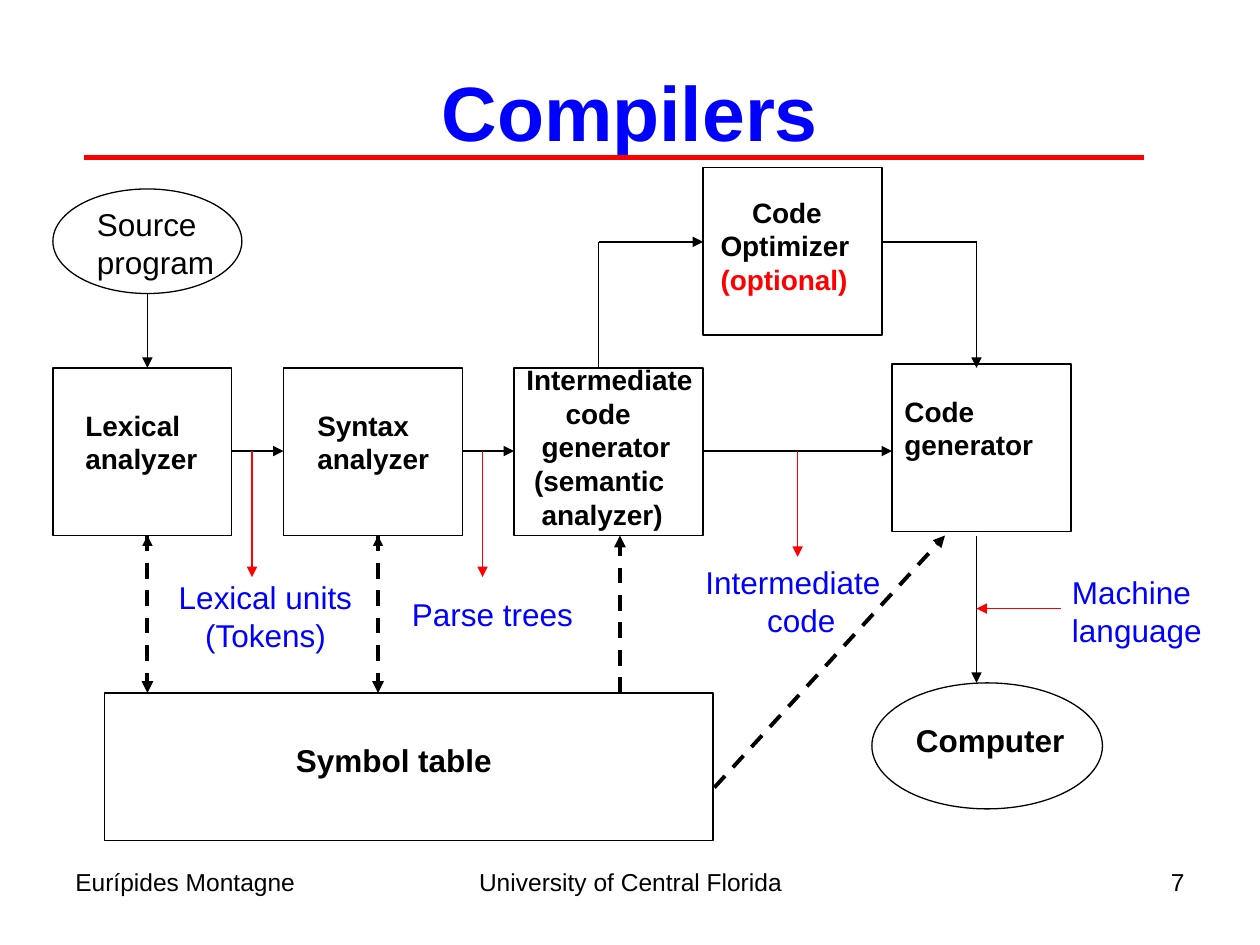
"""Build the slide that shows the phases of a compiler."""
import pptx
import pptx.dml.color
import pptx.enum.dml
import pptx.enum.shapes
import pptx.enum.text
import pptx.oxml.ns
import pptx.util
from lxml import etree

Inches = pptx.util.Inches
Color = pptx.dml.color.RGBColor
Kind = pptx.enum.shapes.MSO_SHAPE
Align = pptx.enum.text.PP_ALIGN
Anchor = pptx.enum.text.MSO_ANCHOR
qn = pptx.oxml.ns.qn

BLACK = Color(0, 0, 0)
BLUE = Color(0, 0, 255)
RED = Color(255, 0, 0)


def write(para, text, size=18, color=BLACK, bold=False, align=Align.LEFT, indent=0):
    para.alignment = align
    if indent:
        props = para._p.get_or_add_pPr()
        props.set("marL", str(Inches(indent)))
        props.set("indent", "0")
    run = para.add_run()
    run.text = text
    font = run.font
    font.name = "Arial"
    font.size = pptx.util.Pt(size)
    font.bold = bold
    font.color.rgb = color


class Chart:
    def __init__(self, slide):
        self.slide = slide
        self.thin = 0.75
        self.thick = 2.25

    def title(self, text, at):
        head = self.slide.shapes.title
        head.left, head.top, head.width, head.height = map(Inches, at)
        frame = head.text_frame
        frame.vertical_anchor = Anchor.MIDDLE
        write(frame.paragraphs[0], text, size=44, color=BLUE, bold=True,
              align=Align.CENTER)

    def shape(self, kind, *at):
        form = self.slide.shapes.add_shape(kind, *map(Inches, at))
        form.shadow.inherit = False
        form.fill.background()
        form.line.color.rgb = BLACK
        form.line.width = pptx.util.Pt(self.thin)

    def text(self, at, *lines, wrap=False, indents=(), colors=(), **style):
        frame = self.slide.shapes.add_textbox(*map(Inches, at)).text_frame
        frame.word_wrap = wrap
        for i, line in enumerate(lines):
            para = frame.add_paragraph() if i else frame.paragraphs[0]
            look = dict(style)
            if indents:
                look["indent"] = indents[i]
            if colors:
                look["color"] = colors[i]
            write(para, line, **look)

    def line(self, *ends, color=BLACK, width=None, dash=False, arrow=True):
        link = self.slide.shapes.add_connector(
            pptx.enum.shapes.MSO_CONNECTOR.STRAIGHT, *map(Inches, ends))
        link.line.color.rgb = color
        link.line.width = pptx.util.Pt(width or (self.thick if dash else self.thin))
        if dash:
            link.line.dash_style = pptx.enum.dml.MSO_LINE.DASH
        if arrow:
            tip = etree.SubElement(link.line._get_or_add_ln(), qn("a:tailEnd"))
            tip.set("type", "triangle")
        etree.SubElement(link._element.spPr, qn("a:effectLst"))


def main():
    deck = pptx.Presentation()
    deck.slide_width, deck.slide_height = Inches(10), Inches(7.5)
    chart = Chart(deck.slides.add_slide(deck.slide_layouts[5]))

    for left, width, text, align in (
            (0.5, 2.33, "Eurípides Montagne", Align.LEFT),
            (3.42, 3.17, "University of Central Florida", Align.CENTER),
            (7.17, 2.33, "7", Align.RIGHT)):
        chart.text((left, 6.83, width, 0.52), text, wrap=True, size=14, align=align)
    chart.title("Compilers", (0.5, 0.25, 9, 1.25))
    chart.line(0.67, 1.25, 9.08, 1.25, color=RED, width=3, arrow=False)

    for left, top, width in ((0.42, 2.92, 1.42), (2.25, 2.92, 1.42),
                             (4.08, 2.92, 1.5), (7.08, 2.89, 1.42),
                             (5.58, 1.33, 1.42)):
        chart.shape(Kind.RECTANGLE, left, top, width, 1.33)
    chart.shape(Kind.RECTANGLE, 0.83, 5.5, 4.83, 1.17)
    chart.shape(Kind.OVAL, 0.42, 1.5, 1.5, 0.83)
    chart.shape(Kind.OVAL, 6.92, 5.42, 1.83, 1)

    phase = {"size": 16, "bold": True}
    chart.text((0.58, 3.19, 1.1, 0.64), "Lexical", "analyzer", **phase)
    chart.text((2.42, 3.19, 1.1, 0.64), "Syntax", "analyzer", **phase)
    chart.text((4.08, 2.83, 1.52, 1.44), "Intermediate", "code", "generator",
               "(semantic", "analyzer)", indents=(0, 0.31, 0.12, 0.06, 0.12), **phase)
    chart.text((7.08, 3.08, 1.23, 0.64), "Code", "generator", **phase)
    chart.text((5.5, 1.5, 1.35, 0.91), "Code", "Optimizer", "(optional)",
               indents=(0.37, 0.12, 0.12), colors=(BLACK, BLACK, RED), **phase)
    chart.text((0.67, 1.58, 1.13, 0.7), "Source", "program")
    chart.text((7.17, 5.67, 1.38, 0.4), "Computer", bold=True)
    chart.text((2.25, 5.83, 1.76, 0.4), "Symbol table", bold=True)

    chart.text((1.32, 4.54, 1.58, 0.7), "Lexical units", "(Tokens)",
               indents=(0, 0.21), color=BLUE)
    chart.text((3.17, 4.67, 1.48, 0.7), "Parse trees", color=BLUE)
    chart.text((5.5, 4.42, 1.59, 0.7), "Intermediate", "code",
               indents=(0, 0.49), color=BLUE)
    chart.text((8.41, 4.5, 1.23, 0.7), "Machine", "language", color=BLUE)

    for start, end in ((1.83, 2.25), (3.67, 4.08), (5.58, 7.08)):
        chart.line(start, 3.58, end, 3.58)
    chart.line(4.75, 2.92, 4.75, 1.92, arrow=False)
    chart.line(4.75, 1.92, 5.58, 1.92)
    chart.line(7, 1.92, 7.75, 1.92, arrow=False)
    chart.line(7.75, 1.92, 7.75, 2.92)
    chart.line(1.17, 2.33, 1.17, 2.92)
    chart.line(7.75, 4.25, 7.75, 5.42)

    for x, end in ((2, 4.58), (3.83, 4.58), (6.33, 4.42)):
        chart.line(x, 3.58, x, end, color=RED)
    chart.line(8.42, 4.83, 7.75, 4.83, color=RED)

    for x in (1.17, 3):
        chart.line(x, 4.25, x, 5.5, dash=True)
        chart.line(x, 4.33, x, 4.25)
    chart.line(4.92, 5.5, 4.92, 4.25, dash=True)
    chart.line(5.67, 6.25, 7.5, 4.25, dash=True)

    deck.save("out.pptx")


if __name__ == "__main__":
    main()
